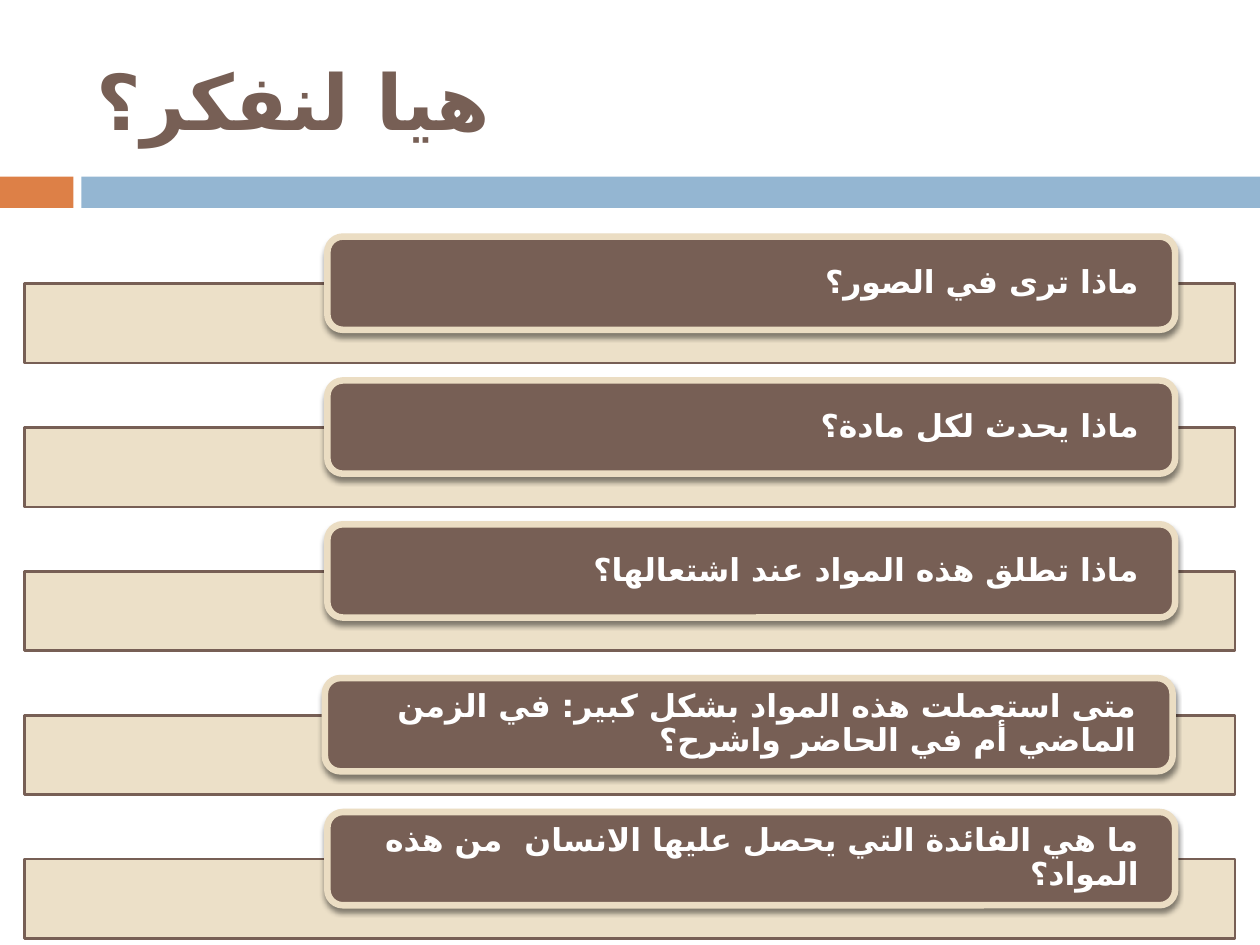
from lxml.etree import SubElement
from pptx import Presentation
from pptx.dml.color import RGBColor
from pptx.enum.shapes import MSO_SHAPE as Shape
from pptx.enum.text import MSO_ANCHOR as Anchor, PP_ALIGN as Align
from pptx.oxml.ns import qn
from pptx.util import Cm, Pt

BROWN = RGBColor(0x77, 0x5F, 0x55)
CREAM = RGBColor(0xEB, 0xDD, 0xC3)
ORANGE = RGBColor(0xDD, 0x80, 0x47)
BLUE = RGBColor(0x94, 0xB6, 0xD2)
WHITE = RGBColor(0xFF, 0xFF, 0xFF)

ARABIC_FONT = "DejaVu Sans"
QUESTIONS = [
    "ماذا ترى في الصور؟",
    "ماذا يحدث لكل مادة؟",
    "ماذا تطلق هذه المواد عند اشتعالها؟",
    "متى استعملت هذه المواد بشكل كبير: في الزمن الماضي أم في الحاضر واشرح؟",
    "ما هي الفائدة التي يحصل عليها الانسان  من هذه المواد؟",
]
NUDGES = {3: (-0.05, 0.2)}
ROW_PITCH = 2.9


def add_box(slide, kind, left, top, width, height, fill, line=None, line_width=0):
    """Add a filled preset shape, sized in centimetres, without a shadow."""
    shape = slide.shapes.add_shape(kind, Cm(left), Cm(top), Cm(width), Cm(height))
    shape.shadow.inherit = False
    shape.fill.solid()
    shape.fill.fore_color.rgb = fill
    if line is None:
        shape.line.fill.background()
    else:
        shape.line.color.rgb = line
        shape.line.width = Pt(line_width)
    return shape


def set_opacity(shape, percent):
    """Make the solid fill of a shape partly transparent."""
    color = shape._element.spPr.find(qn("a:solidFill"))[0]
    SubElement(color, qn("a:alpha"), val=str(percent * 1000))


def add_drop_shadow(shape):
    """Give a shape a soft black shadow straight below it."""
    effects = shape._element.spPr.find(qn("a:effectLst"))
    shadow = SubElement(effects, qn("a:outerShdw"), blurRad=str(Pt(3)),
                        dist=str(Pt(2.4)), dir="5400000", rotWithShape="0")
    color = SubElement(shadow, qn("a:srgbClr"), val="000000")
    SubElement(color, qn("a:alpha"), val="45000")


def write_text(shape, text, font, size, color, alignment):
    """Write one bold right-to-left paragraph, centred vertically."""
    text_frame = shape.text_frame
    text_frame.text = text
    text_frame.word_wrap = True
    text_frame.vertical_anchor = Anchor.MIDDLE
    paragraph = text_frame.paragraphs[0]
    paragraph.alignment = alignment
    paragraph._p.get_or_add_pPr().set("rtl", "1")
    run = paragraph.runs[0]
    run.font.name = font
    run.font.size = Pt(size)
    run.font.bold = True
    run.font.color.rgb = color
    SubElement(run._r.get_or_add_rPr(), qn("a:cs"), typeface=ARABIC_FONT)
    return paragraph


def add_header(slide, top, width):
    """Place the title above the orange and blue band."""
    title = slide.shapes.add_textbox(Cm(1.7), Cm(top), Cm(22.65), Cm(2.75))
    write_text(title, "هيا لنفكر؟", "Cabin", 44, BROWN, Align.LEFT)
    band_top, band_height, blue_left = top + 2.92, 0.63, 1.64
    add_box(slide, Shape.RECTANGLE, 0, band_top, 1.48, band_height, ORANGE)
    add_box(slide, Shape.RECTANGLE, blue_left, band_top, width - blue_left,
            band_height, BLUE)


def add_question(slide, left, top, width, question, nudge):
    """Place a cream bar with a question label overlapping its upper edge."""
    bar = add_box(slide, Shape.RECTANGLE, left, top, width, 1.6, CREAM, BROWN, 1.5)
    set_opacity(bar, 90)
    nudge_x, nudge_y = nudge
    label = add_box(slide, Shape.ROUNDED_RECTANGLE, left + 6.1 + nudge_x,
                    top - 0.95 + nudge_y, 17.09, 1.88, BROWN, CREAM, 3.75)
    add_drop_shadow(label)
    text_frame = label.text_frame
    text_frame.margin_left = text_frame.margin_right = Cm(0.64)
    text_frame.margin_top = text_frame.margin_bottom = 0
    paragraph = write_text(label, question, "Quicksand", 18, WHITE, Align.RIGHT)
    paragraph.line_spacing = 0.9


def add_question_list(slide, left, top, width):
    """Stack the questions at an equal pitch."""
    for index, question in enumerate(QUESTIONS):
        add_question(slide, left, top + index * ROW_PITCH, width, question,
                     NUDGES.get(index, (0, 0)))


def main():
    """Build and save the presentation."""
    presentation = Presentation()
    presentation.slide_width = Cm(25.4)
    presentation.slide_height = Cm(19.05)
    slide = presentation.slides.add_slide(presentation.slide_layouts[6])
    add_header(slide, 0.64, 25.4)
    add_question_list(slide, 0.5, 5.72, 24.4)
    presentation.save("out.pptx")


if __name__ == "__main__":
    main()
